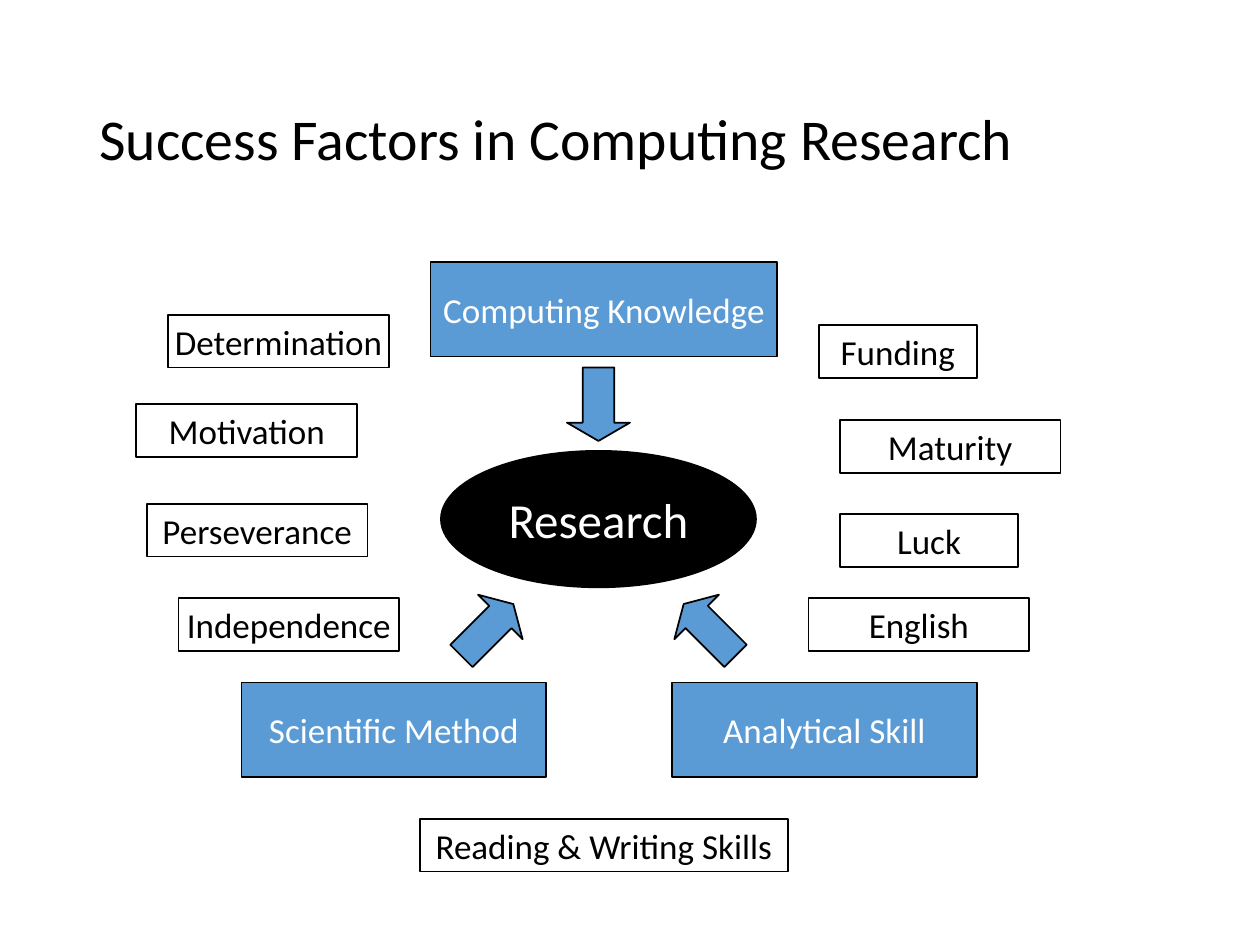
from pptx import Presentation
from pptx.dml.color import RGBColor
from pptx.enum.shapes import MSO_SHAPE
from pptx.enum.text import MSO_ANCHOR, MSO_AUTO_SIZE, PP_ALIGN
from pptx.util import Cm, Pt

BLACK, WHITE, BLUE = "000000", "FFFFFF", "5B9BD5"
FACTOR_W, FACTOR_H = 4.45, 1.06
PILLAR_H = 1.9


def rgb(value):
    return RGBColor.from_string(value)


class Diagram:
    """Holds the slide being drawn and its shared style."""

    font = "Calibri"
    line_width = Pt(1)

    def __init__(self, s):
        self.s = s

    def format_runs(self, p, size, color):
        for r in p.runs:
            r.font.name = self.font
            r.font.size = Pt(size)
            r.font.color.rgb = rgb(color)

    def title(self, text, left, top, width, height):
        sp = self.s.shapes.title
        sp.left, sp.top, sp.width, sp.height = map(Cm, (left, top, width, height))
        tf = sp.text_frame
        tf.text = text
        tf.auto_size = MSO_AUTO_SIZE.NONE
        tf.vertical_anchor = MSO_ANCHOR.MIDDLE
        p = tf.paragraphs[0]
        p.alignment = PP_ALIGN.LEFT
        p.line_spacing = 0.9
        self.format_runs(p, 33, BLACK)

    def shape(self, kind, left, top, width, height, fill=None):
        sp = self.s.shapes.add_shape(kind, *map(Cm, (left, top, width, height)))
        sp.shadow.inherit = False
        if fill:
            sp.fill.solid()
            sp.fill.fore_color.rgb = rgb(fill)
        else:
            sp.fill.background()
        sp.line.color.rgb = rgb(BLACK)
        sp.line.width = self.line_width
        return sp

    def label(self, sp, text, size, color):
        tf = sp.text_frame
        tf.text = text
        tf.word_wrap = False
        tf.vertical_anchor = MSO_ANCHOR.MIDDLE
        p = tf.paragraphs[0]
        p.alignment = PP_ALIGN.CENTER
        self.format_runs(p, size, color)

    def hub(self, text, left, top, width, height):
        sp = self.shape(MSO_SHAPE.OVAL, left, top, width, height, BLACK)
        self.label(sp, text, 28, WHITE)

    def pillar(self, text, left, top, width, arrow_left, arrow_top, rotation):
        """Group a blue box with the arrow that leads from it to the hub."""
        box = self.shape(MSO_SHAPE.RECTANGLE, left, top, width, PILLAR_H, BLUE)
        self.label(box, text, 20, WHITE)
        arrow = self.shape(MSO_SHAPE.DOWN_ARROW, arrow_left, arrow_top, 1.27, 1.48, BLUE)
        arrow.adjustments[0] = 0.5
        arrow.adjustments[1] = 0.29
        arrow.rotation = rotation
        self.s.shapes.add_group_shape([box, arrow])

    def factor(self, text, left, top, width=FACTOR_W):
        sp = self.shape(MSO_SHAPE.RECTANGLE, left, top, width, FACTOR_H)
        self.label(sp, text, 20, BLACK)


def main():
    prs = Presentation()
    prs.slide_width, prs.slide_height = Cm(25.4), Cm(19.05)
    d = Diagram(prs.slides.add_slide(prs.slide_layouts[5]))

    d.title("Success Factors in Computing Research", 1.75, 1.02, 21.9, 3.68)
    d.hub("Research", 8.89, 9.09, 6.35, 2.75)

    d.pillar("Computing Knowledge", 8.68, 5.29, 6.99, 11.43, 7.41, 0)
    d.pillar("Scientific Method", 4.87, 13.76, 6.14, 9.19, 11.96, 225)
    d.pillar("Analytical Skill", 13.55, 13.76, 6.14, 13.67, 11.96, 135)

    d.factor("Determination", 3.39, 6.35)
    d.factor("Motivation", 2.75, 8.15)
    d.factor("Perseverance", 2.96, 10.16)
    d.factor("Independence", 3.6, 12.06)

    d.factor("Funding", 16.51, 6.56, 3.18)
    d.factor("Maturity", 16.93, 8.47)
    d.factor("Luck", 16.93, 10.37, 3.6)
    d.factor("English", 16.3, 12.06)

    d.factor("Reading & Writing Skills", 8.47, 16.51, 7.41)

    prs.save("out.pptx")


if __name__ == "__main__":
    main()
